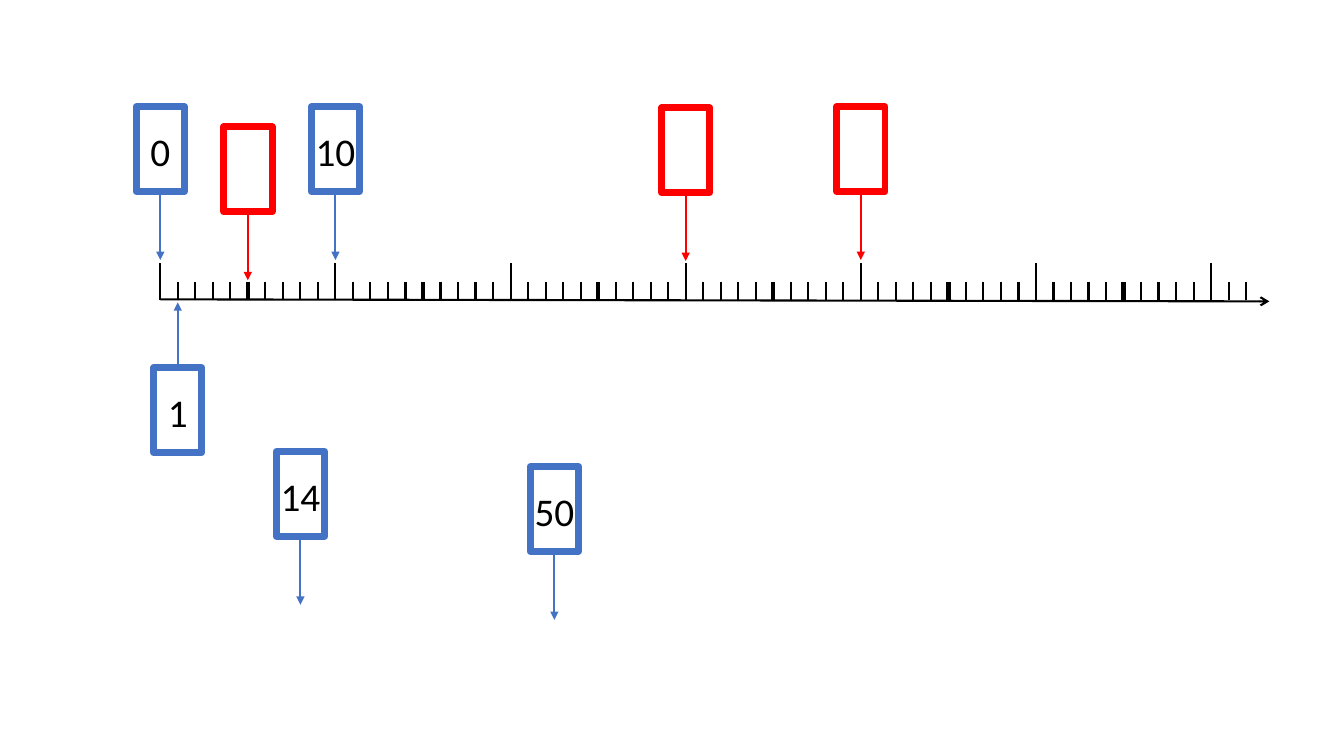
from lxml import etree
from pptx import Presentation
from pptx.dml.color import RGBColor
from pptx.enum import shapes, text
from pptx.oxml import ns
from pptx.util import Inches, Pt

COLOURS = {"axis": "000000", "given": "4472C4", "asked": "FF0000", "label": "000000"}

# Number line
AXIS_START, AXIS_END = (1.59, 2.97), (12.59, 2.99)
ZERO_X, TEN_STEP, LAST_TICK = 1.59, 1.737, 62
TICK_FOOT, LONG_TICK, SHORT_TICK = 2.98, 0.37, 0.18

# Cards: label, place on the number line, top, direction, kind
CARDS = [
    ("10", 10, 1.06, "down", "given"),
    ("1", 1, 3.65, "up", "given"),
    ("", 30, 1.07, "down", "asked"),
    ("", 5, 1.26, "down", "asked"),
    ("", 40, 1.06, "down", "asked"),
    ("14", 8, 4.48, "down", "given"),
    ("50", 22.5, 4.63, "down", "given"),
    ("0", 0, 1.06, "down", "given"),
]
CARD_W, CARD_H = 0.48, 0.84
# Arrow tip measured from the card's top, and the side it leaves from
ARROWS = {"down": (1.52, 2), "up": (-0.65, 0)}
LABEL_FRAME = {
    "word_wrap": False, "vertical_anchor": text.MSO_ANCHOR.MIDDLE,
    "margin_left": 0, "margin_right": 0, "margin_top": Inches(0.03), "margin_bottom": 0,
}
LABEL_FONT = {"name": "Calibri", "size": Pt(28)}


def rgb(part):
    return RGBColor.from_string(COLOURS[part])


def set_all(target, values):
    for key, value in values.items():
        setattr(target, key, value)


def place_x(number):
    return ZERO_X + number * TEN_STEP / 10


def add_line(slide, start, end, part, width=1.5, head=None):
    line = slide.shapes.add_connector(
        shapes.MSO_CONNECTOR.STRAIGHT, *(Inches(v) for v in (*start, *end)))
    line.line.color.rgb = rgb(part)
    line.line.width = Pt(width)
    if head:
        etree.SubElement(line.line._ln, ns.qn("a:tailEnd")).set("type", head)
    etree.SubElement(line._element.spPr, ns.qn("a:effectLst"))
    return line


def add_card(slide, label, number, top, direction, kind):
    x = place_x(number)
    card = slide.shapes.add_shape(
        shapes.MSO_SHAPE.RECTANGLE, Inches(x - CARD_W / 2), Inches(top),
        Inches(CARD_W), Inches(CARD_H))
    card.shadow.inherit = False
    card.fill.background()
    card.line.color.rgb = rgb(kind)
    card.line.width = Pt(5)
    if label:
        set_all(card.text_frame, LABEL_FRAME)
        paragraph = card.text_frame.paragraphs[0]
        paragraph.alignment = text.PP_ALIGN.CENTER
        run = paragraph.add_run()
        run.text = label
        set_all(run.font, LABEL_FONT)
        run.font.color.rgb = rgb("label")
    reach, side = ARROWS[direction]
    arrow = add_line(slide, (x, top), (x, top + reach), kind, head="triangle")
    arrow.begin_connect(card, side)


def main():
    deck = Presentation()
    deck.slide_width, deck.slide_height = Inches(13.33), Inches(7.5)
    slide = deck.slides.add_slide(deck.slide_layouts[6])

    # Axis and its ticks: long at tens, thick at fives
    add_line(slide, AXIS_START, AXIS_END, "axis", head="arrow")
    for number in range(LAST_TICK + 1):
        x = place_x(number)
        height = SHORT_TICK if number % 10 else LONG_TICK
        width = 3 if number % 10 == 5 else 1.5
        add_line(slide, (x, TICK_FOOT), (x, TICK_FOOT - height), "axis", width)

    # Number cards with arrows
    for card in CARDS:
        add_card(slide, *card)

    deck.save("out.pptx")


if __name__ == "__main__":
    main()
